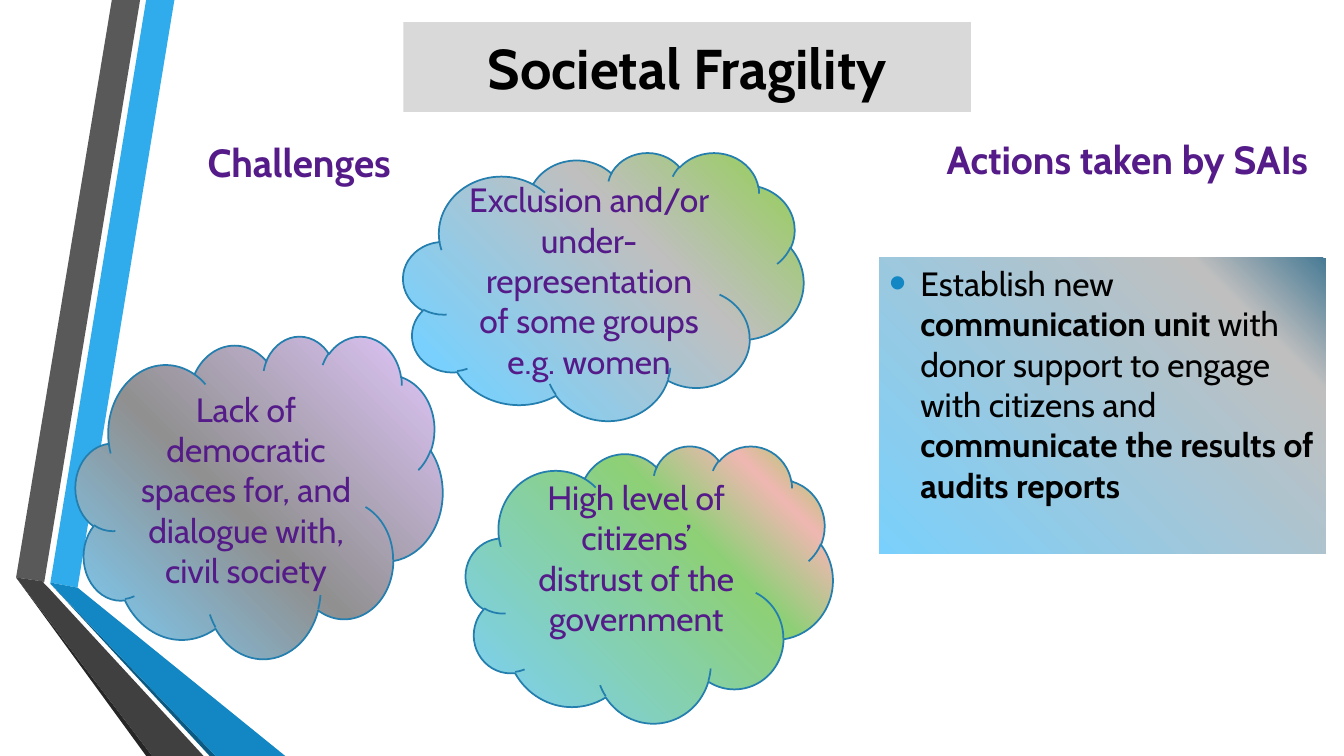
from lxml.etree import SubElement
from pptx import Presentation
from pptx.dml.color import RGBColor
from pptx.enum.shapes import MSO_SHAPE
from pptx.enum.text import MSO_ANCHOR, PP_ALIGN
from pptx.oxml.ns import qn
from pptx.util import Inches, Pt

COLORS = {
    "black": "000000", "purple": "541B89", "title": "D9D9D9", "outline": "247FAF",
    "bullet": "1287C3", "sky": "7AD0FC", "silver": "BFBFBF", "lime": "92D050",
    "steel": "487B95", "pink": "EFB7B1", "green": "8DD076", "lilac": "DBC2F3",
    "gray": "909090", "blue light": "30ACEC", "blue dark": "0C5A82",
    "gray mid": "595959", "gray deep": "404040", "gray dark": "262626",
}

RIBBONS = [
    ("blue light", [(50, 578), (77, 583), (173, 0), (145, 0)]),
    ("gray mid", [(139, 0), (111, 0), (16, 573), (44, 577)]),
    ("gray dark", [(16, 573), (145, 750), (151, 750)]),
    ("blue dark", [(50, 579), (208, 750), (214, 750)]),
    ("bullet", [(50, 579), (214, 750), (283, 750), (77, 583), (50, 578)]),
    ("gray deep", [(202, 750), (48, 583), (43, 578), (44, 577), (16, 573), (151, 750)]),
]

TITLE = ("Societal Fragility", (4, 0.22, 5.63, 0.89))
HEADINGS = [
    ("Challenges", (1.96, 1.26, 4.85, 0.63), PP_ALIGN.LEFT),
    ("Actions taken by SAIs", (8.97, 1.23, 4.1, 0.63), PP_ALIGN.RIGHT),
]
ACTION_AREA = (8.72, 2.56, 4.43, 2.93)
ACTION_STOPS = [(0, "steel"), (18, "silver"), (100, "sky")]
ACTION = [
    ("Establish new ", False),
    ("communication unit ", True),
    ("with donor support to engage with citizens and ", False),
    ("communicate the results of audits reports", True),
]
CLOUDS = [
    ("High level of citizens’ distrust of the government", (4.62, 4.42, 3.64, 2.75),
     [(0, "lime"), (16, "pink"), (35, "green"), (100, "sky")], 0.45),
    ("Lack of democratic spaces for, and dialogue with, civil society",
     (0.75, 3.33, 3.64, 3.2), [(5, "lilac"), (55, "gray"), (100, "sky")], 0.05),
    ("Exclusion and/or under-representation of some groups e.g. women",
     (4, 1.51, 3.97, 2.66), [(0, "lime"), (37, "silver"), (86, "sky")], 0.05),
]


def color(name):
    return RGBColor.from_string(COLORS[name])


def fill_solid(shape, name):
    shape.shadow.inherit = False
    shape.fill.solid()
    shape.fill.fore_color.rgb = color(name)
    shape.line.fill.background()


def fill_gradient(shape, stops):
    shape.shadow.inherit = False
    shape.fill.gradient()
    shape.fill.gradient_angle = 225
    stop_list = next(shape._element.spPr.iter(qn("a:gsLst")))
    for stop in list(stop_list):
        stop_list.remove(stop)
    for percent, name in stops:
        stop = SubElement(stop_list, qn("a:gs"), pos=str(percent * 1000))
        SubElement(stop, qn("a:srgbClr"), val=COLORS[name])
    shape.line.fill.background()


def write(shape, runs, size, name, align, anchor):
    frame = shape.text_frame
    frame.word_wrap = True
    frame.vertical_anchor = anchor
    para = frame.paragraphs[0]
    para.alignment = align
    for text, bold in runs:
        span = para.add_run()
        span.text = text
        span.font.name = "Cabin"
        span.font.size = Pt(size)
        span.font.bold = bold
        span.font.color.rgb = color(name)
    return para


def add_bullet(para):
    props = para._p.get_or_add_pPr()
    props.set("marL", str(Inches(0.31)))
    props.set("indent", str(-Inches(0.31)))
    tint = SubElement(props, qn("a:buClr"))
    SubElement(tint, qn("a:srgbClr"), val=COLORS["bullet"])
    SubElement(props, qn("a:buSzPct"), val="145000")
    SubElement(props, qn("a:buFont"), typeface="Arial")
    SubElement(props, qn("a:buChar"), char="•")


def main():
    deck = Presentation()
    deck.slide_width, deck.slide_height = Inches(13.33), Inches(7.5)
    page = deck.slides.add_slide(deck.slide_layouts[6])
    shapes = page.shapes

    for name, points in RIBBONS:
        builder = shapes.build_freeform(*points[0], scale=Inches(0.01))
        builder.add_line_segments(points[1:], close=True)
        fill_solid(builder.convert_to_shape(), name)

    text, area = TITLE
    box = shapes.add_shape(MSO_SHAPE.RECTANGLE, *map(Inches, area))
    fill_solid(box, "title")
    write(box, [(text, True)], 40, "black", PP_ALIGN.CENTER, MSO_ANCHOR.MIDDLE)

    for text, area, align in HEADINGS:
        box = shapes.add_textbox(*map(Inches, area))
        write(box, [(text, True)], 28, "purple", align, MSO_ANCHOR.BOTTOM)

    box = shapes.add_shape(MSO_SHAPE.RECTANGLE, *map(Inches, ACTION_AREA))
    fill_gradient(box, ACTION_STOPS)
    add_bullet(write(box, ACTION, 24, "black", PP_ALIGN.LEFT, MSO_ANCHOR.TOP))

    for text, area, stops, bottom in CLOUDS:
        cloud = shapes.add_shape(MSO_SHAPE.CLOUD, *map(Inches, area))
        fill_gradient(cloud, stops)
        cloud.line.color.rgb = color("outline")
        cloud.line.width = Pt(1.25)
        cloud.text_frame.margin_bottom = Inches(bottom)
        write(cloud, [(text, False)], 24, "purple", PP_ALIGN.CENTER, MSO_ANCHOR.MIDDLE)

    deck.save("out.pptx")


if __name__ == "__main__":
    main()
